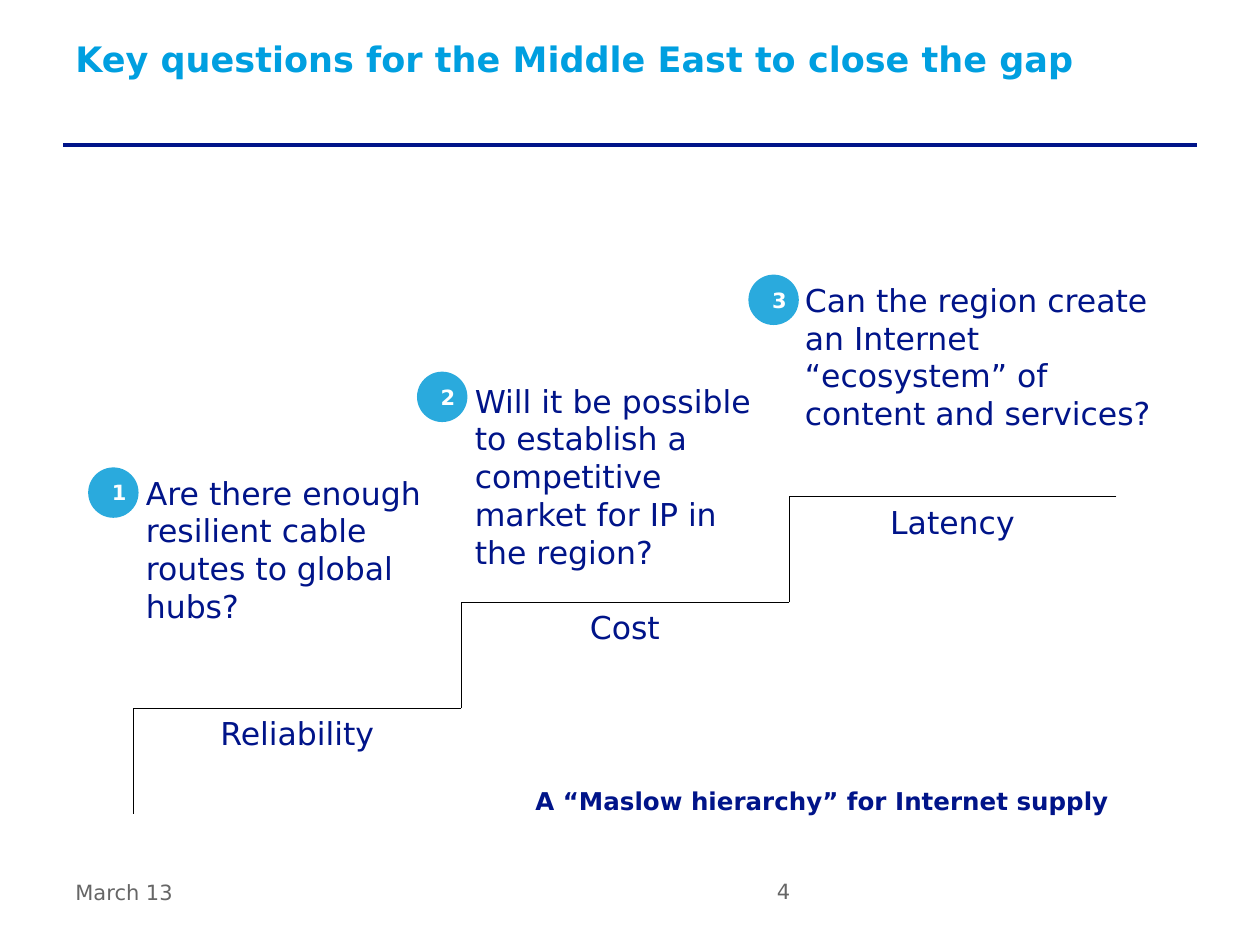
from dataclasses import dataclass

from lxml.etree import SubElement
from pptx import Presentation
from pptx.dml.color import RGBColor
from pptx.enum.shapes import MSO_CONNECTOR, MSO_SHAPE
from pptx.enum.text import MSO_ANCHOR, PP_ALIGN
from pptx.oxml.ns import qn
from pptx.util import Inches, Pt


@dataclass(frozen=True)
class Theme:
    font: str = "DejaVu Sans"
    navy: str = "001489"
    title_blue: str = "009FE0"
    badge_blue: str = "2AAADD"
    grey: str = "666666"
    black: str = "000000"
    white: str = "FFFFFF"
    title_size: int = 20
    body_size: int = 18
    caption_size: int = 14
    small_size: int = 12


@dataclass(frozen=True)
class Box:
    left: float
    top: float
    width: float
    height: float

    def lengths(self) -> tuple:
        return tuple(Inches(v) for v in (self.left, self.top, self.width, self.height))


@dataclass(frozen=True)
class Step:
    label: str
    question: str
    question_box: Box
    badge_left: float
    badge_top: float


THEME = Theme()
STAIR_LEFT, STAIR_BOTTOM = 1.06, 6.46
STEP_WIDTH, STEP_RISE = 2.6, 0.84
LABEL_HEIGHT = 0.4
BADGE_SIZE = 0.4

STEPS = [
    Step("Reliability", "Are there enough resilient cable routes to global hubs?",
         Box(1.06, 3.71, 2.6, 1.31), 0.7, 3.71),
    Step("Cost", "Will it be possible to establish a competitive market for IP in the region?",
         Box(3.67, 2.98, 2.59, 1.62), 3.31, 2.95),
    Step("Latency", "Can the region create an Internet “ecosystem” of content and services?",
         Box(6.29, 2.18, 3.04, 1.31), 5.94, 2.18),
]


def write_text(shape, text: str, size: int, color: str, bold: bool = False,
               align=PP_ALIGN.LEFT, anchor=MSO_ANCHOR.TOP) -> None:
    frame = shape.text_frame
    frame.word_wrap = True
    frame.vertical_anchor = anchor
    frame.text = text
    paragraph = frame.paragraphs[0]
    paragraph.alignment = align
    font = paragraph.runs[0].font
    font.name, font.size, font.bold = THEME.font, Pt(size), bold
    font.color.rgb = RGBColor.from_string(color)


def add_text(slide, box: Box, text: str, size: int, color: str = THEME.navy, **options):
    shape = slide.shapes.add_textbox(*box.lengths())
    write_text(shape, text, size, color, **options)
    return shape


def add_footer(slide, box: Box, text: str, align) -> None:
    shape = add_text(slide, box, text, THEME.small_size, THEME.grey,
                     align=align, anchor=MSO_ANCHOR.MIDDLE)
    shape.text_frame.margin_top = shape.text_frame.margin_bottom = Inches(0)


def add_line(slide, start: tuple[float, float], end: tuple[float, float],
             color: str, width: float) -> None:
    points = [Inches(value) for value in (*start, *end)]
    connector = slide.shapes.add_connector(MSO_CONNECTOR.STRAIGHT, *points)
    connector.line.color.rgb = RGBColor.from_string(color)
    connector.line.width = Pt(width)
    SubElement(connector.element.spPr, qn("a:effectLst"))


def add_badge(slide, left: float, top: float, number: int) -> None:
    box = Box(left, top, BADGE_SIZE, BADGE_SIZE)
    badge = slide.shapes.add_shape(MSO_SHAPE.OVAL, *box.lengths())
    badge.shadow.inherit = False
    badge.fill.solid()
    badge.fill.fore_color.rgb = RGBColor.from_string(THEME.badge_blue)
    badge.line.fill.background()
    badge.text_frame.margin_left = Inches(0.13)
    write_text(badge, str(number), THEME.small_size, THEME.white, bold=True,
               align=PP_ALIGN.CENTER, anchor=MSO_ANCHOR.MIDDLE)


def add_step(slide, index: int, step: Step) -> None:
    left = STAIR_LEFT + index * STEP_WIDTH
    bottom = STAIR_BOTTOM - index * STEP_RISE
    top = bottom - STEP_RISE
    # Riser, then tread
    add_line(slide, (left, bottom), (left, top), THEME.black, 0.25)
    add_line(slide, (left + STEP_WIDTH, top), (left, top), THEME.black, 0.25)
    add_text(slide, Box(left, top, STEP_WIDTH, LABEL_HEIGHT), step.label,
             THEME.body_size, align=PP_ALIGN.CENTER)
    add_text(slide, step.question_box, step.question, THEME.body_size)
    add_badge(slide, step.badge_left, step.badge_top, index + 1)


def main() -> None:
    presentation = Presentation()
    presentation.slide_width, presentation.slide_height = Inches(10), Inches(7.5)
    slide = presentation.slides.add_slide(presentation.slide_layouts[6])

    # Title and rule
    add_line(slide, (0.5, 1.15), (9.5, 1.15), THEME.navy, 2)
    add_text(slide, Box(0.5, 0.25, 9, 0.9),
             "Key questions for the Middle East to close the gap",
             THEME.title_size, THEME.title_blue, bold=True)

    # Staircase with its questions
    for index, step in enumerate(STEPS):
        add_step(slide, index, step)
    add_text(slide, Box(3.68, 6.19, 5.22, 0.34),
             "A “Maslow hierarchy” for Internet supply",
             THEME.caption_size, bold=True, align=PP_ALIGN.RIGHT)

    # Footer
    add_footer(slide, Box(0.5, 6.99, 1.59, 0.18), "March 13", PP_ALIGN.LEFT)
    add_footer(slide, Box(5.87, 6.98, 0.5, 0.19), "4", PP_ALIGN.RIGHT)

    presentation.save("out.pptx")


if __name__ == "__main__":
    main()
